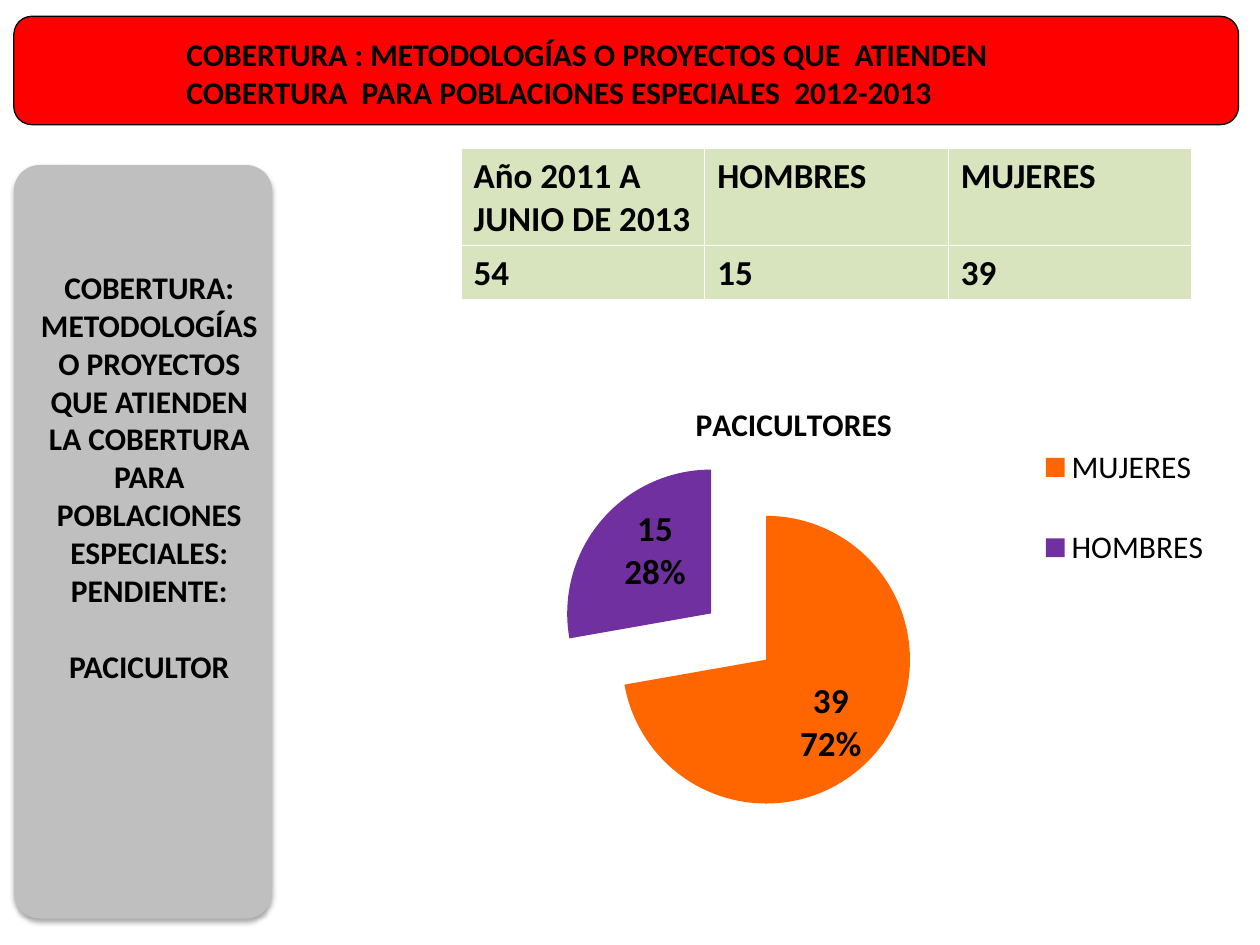
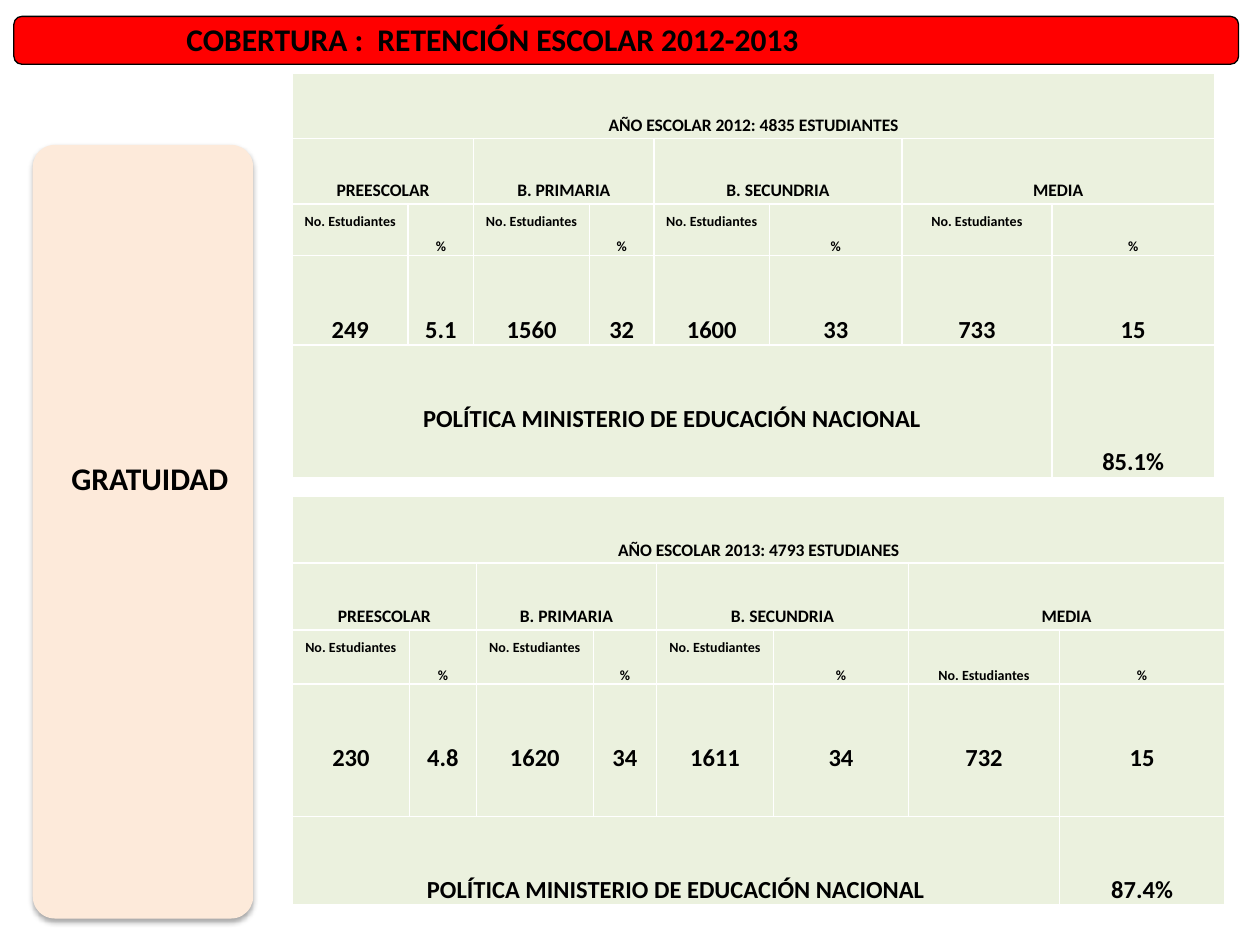
from copy import deepcopy
from itertools import accumulate

from lxml import etree
from pptx import Presentation
from pptx import util as u
from pptx.chart import data as chart_data
from pptx.dml.color import RGBColor
from pptx.enum import chart as charts, shapes, text
from pptx.oxml import parse_xml
from pptx.oxml.ns import nsdecls, qn

COLORS = {
    "band": "FF0000", "ink": "000000", "gray": "BFBFBF", "peach": "FDEADA",
    "green": "D7E4BD", "pale green": "EBF1DE", "women": "FF6600", "men": "7030A0",
}
FONT = "Calibri"
TOP, MIDDLE, BOTTOM = text.MSO_ANCHOR.TOP, text.MSO_ANCHOR.MIDDLE, text.MSO_ANCHOR.BOTTOM
LEFT, CENTER = text.PP_ALIGN.LEFT, text.PP_ALIGN.CENTER

presentation = Presentation()
presentation.slide_width, presentation.slide_height = u.Inches(10), u.Inches(7.5)
UNIT = presentation.slide_width / 100  # the slide is a grid of 100 columns by 75 rows


def grid(*cells):
    """Turn grid columns and rows into slide lengths."""
    return [u.Emu(round(cell * UNIT)) for cell in cells]


def write(frame, lines, size=18, align=LEFT, **paragraph_format):
    """Fill a text frame with bold paragraphs in the ink colour."""
    frame.word_wrap = True
    frame.text = "\n".join(lines)
    for paragraph in frame.paragraphs:
        for name, value in {"alignment": align, **paragraph_format}.items():
            setattr(paragraph, name, value)
        font = paragraph.runs[0].font
        for name, value in {"name": FONT, "size": u.Pt(size), "bold": True}.items():
            setattr(font, name, value)
        font.color.rgb = RGBColor.from_string(COLORS["ink"])


# Shared frame: red title band and side panel
frames = [
    {
        "title": "COBERTURA : METODOLOGÍAS O PROYECTOS QUE  ATIENDEN "
                 "COBERTURA  PARA POBLACIONES ESPECIALES  2012-2013",
        "title box": (13.8, 2.3, 76.9, 7.1), "band height": 8.6,
        "panel": (1.1, 13.1, 20.5, 59.8), "panel color": "gray",
        "label": ["COBERTURA: METODOLOGÍAS O PROYECTOS QUE ATIENDEN LA COBERTURA "
                  "PARA POBLACIONES ESPECIALES: PENDIENTE:", "PACICULTOR"],
        "label box": (2, 20.8, 19.7, 34.3),
    },
    {
        "title": "COBERTURA :  RETENCIÓN ESCOLAR 2012-2013",
        "title box": (13.8, 1.1, 76.9, 4), "band height": 3.8,
        "panel": (2.6, 11.5, 17.5, 61.4), "panel color": "peach",
        "label": ["GRATUIDAD"], "label box": (2.4, 35.9, 19, 4),
    },
]
slides = []
for frame in frames:
    slide = presentation.slides.add_slide(presentation.slide_layouts[5])
    slides.append(slide)
    panel = slide.shapes.add_shape(shapes.MSO_SHAPE.ROUNDED_RECTANGLE, *grid(*frame["panel"]))
    band = slide.shapes.add_shape(
        shapes.MSO_SHAPE.ROUNDED_RECTANGLE, *grid(1.1, 1.3, 97.2, frame["band height"]))
    for shape, color, corner in ((panel, frame["panel color"], 0.1), (band, "band", 0.167)):
        shape.shadow.inherit = False
        shape.adjustments[0] = corner
        shape.fill.solid()
        shape.fill.fore_color.rgb = RGBColor.from_string(COLORS[color])
    panel.line.fill.background()
    band.line.color.rgb = RGBColor.from_string(COLORS["ink"])
    band.line.width = u.Pt(0.75)
    effects = panel.element.spPr.find(qn("a:effectLst"))
    effects.append(parse_xml(
        f'<a:outerShdw {nsdecls("a")} blurRad="{u.Pt(3.1)}" dist="{u.Pt(1.8)}" dir="5400000" '
        f'rotWithShape="0"><a:srgbClr val="{COLORS["ink"]}"><a:alpha val="35000"/></a:srgbClr>'
        '</a:outerShdw>'))

    title = slide.shapes.title
    band.element.addnext(title.element)
    title.left, title.top, title.width, title.height = grid(*frame["title box"])
    title.text_frame.auto_size = text.MSO_AUTO_SIZE.NONE
    title.text_frame.vertical_anchor = TOP
    write(title.text_frame, [frame["title"]])

    label = slide.shapes.add_textbox(*grid(*frame["label box"]))
    write(label.text_frame, frame["label"], align=CENTER)
    for paragraph in label.text_frame.paragraphs[1:]:
        paragraph.space_before = u.Pt(22)

# Slide 1: totals table
coverage_slide, retention_slide = slides
totals = [["Año 2011 A JUNIO DE 2013", "HOMBRES", "MUJERES"], ["54", "15", "39"]]
table = coverage_slide.shapes.add_table(2, 3, *grid(36.6, 11.8, 58, 11.9)).table
table.first_row = table.horz_banding = False
for row, height in zip(table.rows, grid(7.6, 4.3)):
    row.height = height
for row, values in zip(table.rows, totals):
    for cell, value in zip(row.cells, values):
        cell.fill.solid()
        cell.fill.fore_color.rgb = RGBColor.from_string(COLORS["green"])
        write(cell.text_frame, [value], 20)

# Slide 1: pie of women and men
pie_data = chart_data.CategoryChartData()
pie_data.categories = ["", "MUJERES", "HOMBRES"]
pie_data.add_series("PACICULTORES", (0, 39, 15, None))
chart = coverage_slide.shapes.add_chart(
    charts.XL_CHART_TYPE.PIE, *grid(28, 30.4, 70.4, 36.6), pie_data).chart
chart.font.name, chart.font.size = FONT, u.Pt(10)
chart.font.color.rgb = RGBColor.from_string(COLORS["ink"])
chart.has_title = chart.has_legend = True
write(chart.chart_title.text_frame, ["PACICULTORES"], align=CENTER)
chart.legend.position = charts.XL_LEGEND_POSITION.RIGHT
chart.legend.include_in_layout = False
chart.legend.font.size = u.Pt(18)

pie = chart.plots[0]
pie.vary_by_categories = True
series = pie.series[0]
for index, color in ((1, "women"), (2, "men")):
    fill = series.points[index].format.fill
    fill.solid()
    fill.fore_color.rgb = RGBColor.from_string(COLORS[color])
series._element.find(qn("c:dPt")).addprevious(
    parse_xml(f'<c:explosion {nsdecls("c")} val="25"/>'))

labels = series.data_labels
for name, value in {"show_value": True, "show_percentage": True,
                    "position": charts.XL_LABEL_POSITION.INSIDE_END}.items():
    setattr(labels, name, value)
labels.font.size, labels.font.bold = u.Pt(20), True
label_element = series._element.find(qn("c:dLbls"))
for leader_lines in label_element.findall(qn("c:showLeaderLines")):
    leader_lines.set("val", "0")
label_format = [child for child in label_element if child.tag != qn("c:showLeaderLines")]
separator = etree.Element(qn("c:separator"))
separator.text = "\n"
label_format[-1].addnext(separator)
label_format.append(separator)

# The zero has no label; the other two are nudged by shares of the chart
label_shifts = [None, {"x": -0.01, "y": 0.04}, {"x": 0.02, "y": -0.04}]
for index, shift in enumerate(label_shifts):
    point_label = etree.Element(qn("c:dLbl"))
    etree.SubElement(point_label, qn("c:idx"), val=str(index))
    if shift is None:
        etree.SubElement(point_label, qn("c:delete"), val="1")
    else:
        layout = etree.SubElement(point_label, qn("c:layout"))
        manual = etree.SubElement(layout, qn("c:manualLayout"))
        for name, value in shift.items():
            etree.SubElement(manual, qn(f"c:{name}"), val=str(value))
        point_label.extend([deepcopy(child) for child in label_format])
    label_element.insert(index, point_label)

# Places inside the chart, as shares of its size
chart_parts = [
    ("c:plotArea", 0, {"layoutTarget": "inner"}, {"x": 0.03, "y": 0.16, "w": 0.81, "h": 0.78}),
    ("c:title", 1, {}, {"x": 0.38, "y": 0.03}),
    ("c:legend", 1, {}, {"x": 0.76, "y": 0.05, "w": 0.22, "h": 0.44}),
]
for tag, position, target, shares in chart_parts:
    part = next(chart._chartSpace.iter(qn(tag)))
    for old_layout in part.findall(qn("c:layout")):
        part.remove(old_layout)
    modes = {f"{axis}Mode": "edge" for axis in "xy"}
    layout = etree.Element(qn("c:layout"))
    manual = etree.SubElement(layout, qn("c:manualLayout"))
    for name, value in {**target, **modes, **shares}.items():
        etree.SubElement(manual, qn(f"c:{name}"), val=str(value))
    part.insert(position, layout)

# Keep the unnamed categories out of the legend
legend_element = next(chart._chartSpace.iter(qn("c:legend")))
for position, index in enumerate((0, 3), start=1):
    legend_element.insert(position, parse_xml(
        f'<c:legendEntry {nsdecls("c")}><c:idx val="{index}"/><c:delete val="1"/>'
        '</c:legendEntry>'))

# Slide 2: one table per school year
PAIRS = [2, 2, 2, 2]
LEVELS = ["PREESCOLAR", "B. PRIMARIA", "B. SECUNDRIA", "MEDIA"]
POLICY = "POLÍTICA MINISTERIO DE EDUCACIÓN NACIONAL"
years = [
    {
        "heading": "AÑO ESCOLAR 2012: 4835 ESTUDIANTES", "share": "85.1%",
        "values": ["249", "5.1", "1560", "32", "1600", "33", "733", "15"],
        "top": 5.8, "columns": (9.2, 5.2, 9.2, 5.1, 9.2, 10.5, 11.9, 12.9),
        "rows": (5.2, 5.2, 4.1, 7.1, 10.5),
        "value anchor": BOTTOM, "policy anchor": MIDDLE, "last count anchor": TOP,
    },
    {
        "heading": "AÑO ESCOLAR 2013: 4793 ESTUDIANES", "share": "87.4%",
        "values": ["230", "4.8", "1620", "34", "1611", "34", "732", "15"],
        "top": 39.4, "columns": (9.3, 5.3, 9.3, 5, 9.3, 10.7, 12, 13.1),
        "rows": (5.3, 5.3, 4.3, 10.5, 7),
        "value anchor": MIDDLE, "policy anchor": BOTTOM, "last count anchor": BOTTOM,
    },
]
for year in years:
    table = retention_slide.shapes.add_table(
        5, 8, *grid(23.2, year["top"], sum(year["columns"]), sum(year["rows"]))).table
    table.first_row = table.horz_banding = False
    for column, width in zip(table.columns, grid(*year["columns"])):
        column.width = width
    for row, height in zip(table.rows, grid(*year["rows"])):
        row.height = height
    for cell in table.iter_cells():
        cell.fill.solid()
        cell.fill.fore_color.rgb = RGBColor.from_string(COLORS["pale green"])
        cell.margin_left = cell.margin_right = u.Inches(0.07)
        cell.margin_top = cell.margin_bottom = 0

    # Each row: texts, column spans, text size, anchors
    content = [
        ([year["heading"]], [8], 10, [BOTTOM]),
        (LEVELS, PAIRS, 10, [BOTTOM] * 4),
        (["No. Estudiantes", "%"] * 4, [1] * 8, 8,
         [TOP, BOTTOM] * 3 + [year["last count anchor"], BOTTOM]),
        (year["values"], [1] * 8, 14, [year["value anchor"]] * 8),
        ([POLICY, year["share"]], [7, 1], 14, [year["policy anchor"], BOTTOM]),
    ]
    for row_index, (texts, spans, size, anchors) in enumerate(content):
        starts = accumulate(spans[:-1], initial=0)
        for value, start, span, anchor in zip(texts, starts, spans, anchors):
            cell = table.cell(row_index, start)
            if span > 1:
                cell.merge(table.cell(row_index, start + span - 1))
            cell.vertical_anchor = anchor
            cell.margin_bottom = u.Inches(0.02 if size == 10 else 0)
            write(cell.text_frame, [value], size, CENTER, line_spacing=1.5)

presentation.save("out.pptx")
